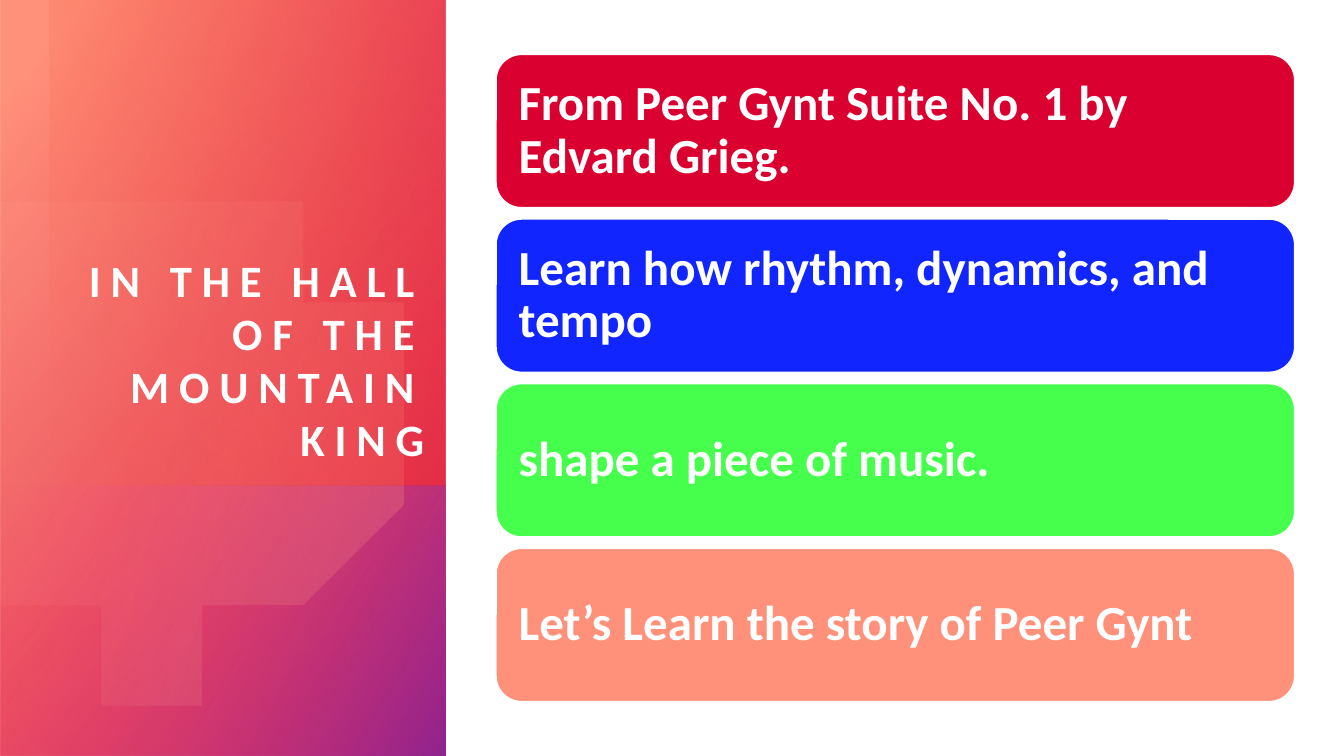
import math

import pptx
import pptx.dml.color
import pptx.enum.shapes
import pptx.enum.text
import pptx.oxml
import pptx.oxml.ns
import pptx.util

RGB = pptx.dml.color.RGBColor
SHAPES = pptx.enum.shapes.MSO_SHAPE
ALIGN = pptx.enum.text.PP_ALIGN
ANCHOR = pptx.enum.text.MSO_ANCHOR
Inches = pptx.util.Inches
Pt = pptx.util.Pt

WHITE = RGB(0xFF, 0xFF, 0xFF)
RED = RGB(0xDA, 0x00, 0x2F)
ORANGE = RGB(0xFE, 0x4A, 0x00)
CORAL = RGB(0xFF, 0x90, 0x7A)
PEACH = RGB(0xFF, 0xBC, 0xAF)
PINK = RGB(0xFF, 0x50, 0x76)
PURPLE = RGB(0x92, 0x24, 0x8E)
BLUE = RGB(0x10, 0x25, 0xFF)
GREEN = RGB(0x45, 0xFF, 0x4C)

SLIDE_W, SLIDE_H = 13.33, 7.5
TITLE = "IN THE HALL OF THE MOUNTAIN KING"
CARDS = [
    ("From Peer Gynt Suite No. 1 by Edvard Grieg.", RED),
    ("Learn how rhythm, dynamics, and tempo", BLUE),
    ("shape a piece of music.", GREEN),
    ("Let’s Learn the story of Peer Gynt", CORAL),
]

# Gradient stops: position %, colour, opacity %
PANELS = [
    {"box": (-1.54, 1.54, 7.5, 4.42), "turn": 270, "angle": 50,
     "stops": [(8, CORAL, 100), (100, RED, 89)]},
    {"box": (0.86, 3.95, 2.69, 4.42), "turn": 270, "angle": 60,
     "stops": [(0, PINK, 0), (99, PURPLE, 100)]},
]
CIRCLE = {"center": (1.58, 4.24), "radius": 2.29, "angle": 14,
          "stops": [(36, PEACH, 6), (100, CORAL, 26)]}
GLOW = {"box": (0.05, 0.45, 4.81, 3.92), "turn": 90, "angle": 110,
        "stops": [(0, RED, 29), (100, ORANGE, 0)]}

TITLE_BOX = (0.5, 0.95, 3.71, 3.68)
CARD_LEFT, CARD_TOP, CARD_W, CARD_H = 4.92, 0.54, 7.92, 1.52
CARD_PITCH = (6.96 - CARD_TOP - CARD_H) / (len(CARDS) - 1)
ARC_STEPS = 90


def paint_gradient(shape, stops, angle):
    """Fill with a two-stop gradient; angle is clockwise in degrees."""
    shape.shadow.inherit = False
    shape.line.fill.background()
    shape.fill.gradient()
    shape.fill.gradient_angle = 360 - angle
    for stop, (position, color, _) in zip(shape.fill.gradient_stops, stops):
        stop.position = position / 100
        stop.color.rgb = color
    tints = shape.element.spPr.findall(".//" + pptx.oxml.ns.qn("a:srgbClr"))
    for tint, (_, _, opacity) in zip(tints, stops):
        if opacity < 100:
            alpha = pptx.oxml.parse_xml(
                f'<a:alpha {pptx.oxml.ns.nsdecls("a")} val="{opacity * 1000}"/>')
            tint.append(alpha)


def add_panel(slide, panel):
    shape = slide.shapes.add_shape(SHAPES.RECTANGLE, *map(Inches, panel["box"]))
    shape.rotation = panel["turn"]
    shape.element.spPr.find(pptx.oxml.ns.qn("a:xfrm")).set("flipH", "1")
    paint_gradient(shape, panel["stops"], panel["angle"])


def add_circle(slide):
    """Draw the circle, cut off at the slide's left edge."""
    (cx, cy), radius = CIRCLE["center"], CIRCLE["radius"]
    sweep = math.acos(-cx / radius)
    angles = [sweep * (2 * i / ARC_STEPS - 1) for i in range(ARC_STEPS + 1)]
    points = [(cx + radius * math.cos(a), cy + radius * math.sin(a)) for a in angles]
    builder = slide.shapes.build_freeform(*points[0], scale=Inches(1))
    builder.add_line_segments(points[1:], close=True)
    paint_gradient(builder.convert_to_shape(), CIRCLE["stops"], CIRCLE["angle"])


def write(shape, text, size, inset, anchor, align, spacing):
    frame = shape.text_frame
    frame.text = text
    layout = {"word_wrap": True, "vertical_anchor": anchor,
              "auto_size": pptx.enum.text.MSO_AUTO_SIZE.NONE}
    for side in ("left", "top", "right", "bottom"):
        layout["margin_" + side] = Inches(inset)
    for name, value in layout.items():
        setattr(frame, name, value)
    paragraph = frame.paragraphs[0]
    paragraph.alignment = align
    paragraph.line_spacing = spacing
    font = paragraph.runs[0].font
    for name, value in {"name": "Calibri", "size": Pt(size), "bold": True}.items():
        setattr(font, name, value)
    font.color.rgb = WHITE
    return font


def place_title(slide):
    title = slide.shapes.title
    for name, value in zip(("left", "top", "width", "height"), TITLE_BOX):
        setattr(title, name, Inches(value))
    font = write(title, TITLE, 32, 0, ANCHOR.BOTTOM, ALIGN.RIGHT, 0.98)
    font._element.set("spc", "700")
    slide.shapes.element.append(title.element)


def add_card(slide, row, text, color):
    card = slide.shapes.add_shape(
        SHAPES.ROUNDED_RECTANGLE, Inches(CARD_LEFT),
        Inches(CARD_TOP + row * CARD_PITCH), Inches(CARD_W), Inches(CARD_H))
    card.shadow.inherit = False
    card.fill.solid()
    card.fill.fore_color.rgb = color
    card.line.color.rgb = WHITE
    card.line.width = Pt(1)
    write(card, text, 35, 0.15, ANCHOR.MIDDLE, ALIGN.LEFT, 0.9)


def main():
    deck = pptx.Presentation()
    deck.slide_width, deck.slide_height = Inches(SLIDE_W), Inches(SLIDE_H)
    slide = deck.slides.add_slide(deck.slide_layouts[5])
    for panel in PANELS:
        add_panel(slide, panel)
    add_circle(slide)
    add_panel(slide, GLOW)
    place_title(slide)
    for row, (text, color) in enumerate(CARDS):
        add_card(slide, row, text, color)
    deck.save("out.pptx")


if __name__ == "__main__":
    main()
